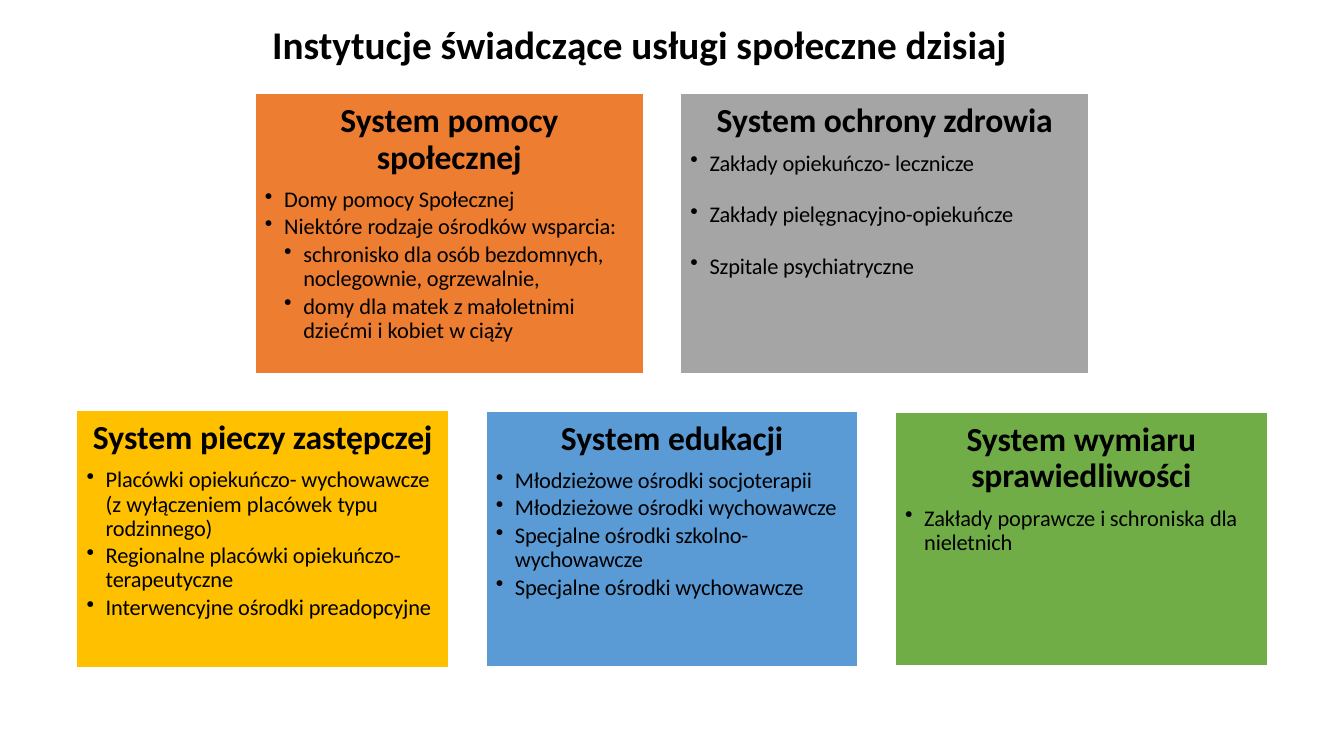
from dataclasses import dataclass
from typing import NamedTuple

from lxml.etree import SubElement
from pptx import Presentation
from pptx.dml.color import RGBColor
from pptx.enum.shapes import MSO_SHAPE
from pptx.enum.text import MSO_ANCHOR, PP_ALIGN
from pptx.oxml.ns import qn
from pptx.util import Inches, Pt


@dataclass(frozen=True)
class Theme:
    font: str = "Calibri"
    text: str = "000000"
    border: str = "FFFFFF"
    social_care: str = "ED7D31"
    health: str = "A5A5A5"
    foster_care: str = "FFC000"
    education: str = "5B9BD5"
    justice: str = "70AD47"
    title_size: float = 28
    heading_size: float = 24
    item_size: float = 16


class Words(NamedTuple):
    text: str
    spacing: float = 0  # points between letters


@dataclass(frozen=True)
class Item:
    words: list[Words]
    level: int = 1
    space_after: float = 2.4


@dataclass(frozen=True)
class System:
    heading: str
    color: str
    width: float  # percent of slide width
    height: float  # percent of slide height
    items: list[Item]


@dataclass(frozen=True)
class Row:
    center: float  # percent of slide height
    systems: list[System]


THEME = Theme()
SLIDE_WIDTH, SLIDE_HEIGHT = Inches(13.33), Inches(7.5)
GAP = 2.75  # percent of slide width
INSET = Inches(0.1)
INDENT = Inches(0.19)
LOOSE = 19.5  # space after the widely set health items

# Content
ROWS = [
    Row(30.93, [
        System("pomocy społecznej", THEME.social_care, 28.9, 37.07, [
            Item([Words("Domy "), Words("pomocy Społecznej", -0.1)]),
            Item([Words("Niektóre "), Words("rodzaje ", -0.1), Words("ośrodków "),
                  Words("wsparcia:", -0.1)]),
            Item([Words("schronisko dla "), Words("osób ", -0.2),
                  Words("bezdomnych, noclegownie, ogrzewalnie,", -0.1)], level=2),
            Item([Words("domy dla matek "), Words("z ", -0.5), Words("małoletnimi ", -0.1),
                  Words("dziećmi i kobiet "), Words("w ", -0.5), Words("ciąży", -0.1)], level=2),
        ]),
        System("ochrony zdrowia", THEME.health, 30.4, 37.07, [
            Item([Words("Zakłady opiekuńczo- lecznicze", -0.1)], space_after=LOOSE),
            Item([Words("Zakłady pielęgnacyjno-opiekuńcze", -0.1)], space_after=LOOSE),
            Item([Words("Szpitale psychiatryczne", -0.1)]),
        ]),
    ]),
    Row(71.3, [
        System("pieczy zastępczej", THEME.foster_care, 27.7, 34, [
            Item([Words("Placówki opiekuńczo- wychowawcze ", -0.1), Words("(z "),
                  Words("wyłączeniem ", -0.1), Words("placówek "), Words("typu ", -0.2),
                  Words("rodzinnego)", -0.1)]),
            Item([Words("Regionalne placówki opiekuńczo- terapeutyczne", -0.1)]),
            Item([Words("Interwencyjne ośrodki preadopcyjne", -0.1)]),
        ]),
        System("edukacji", THEME.education, 27.7, 33.87, [
            Item([Words("Młodzieżowe ośrodki socjoterapii", -0.1)]),
            Item([Words("Młodzieżowe ośrodki wychowawcze", -0.1)]),
            Item([Words("Specjalne ośrodki szkolno- wychowawcze", -0.1)]),
            Item([Words("Specjalne ośrodki wychowawcze", -0.1)]),
        ]),
        System("wymiaru sprawiedliwości", THEME.justice, 27.7, 33.47, [
            Item([Words("Zakłady ", -0.1), Words("poprawcze "), Words("i ", -0.5),
                  Words("schroniska "), Words("dla ", -0.2), Words("nieletnich", -0.1)]),
        ]),
    ]),
]


def across(percent: float) -> int:
    return round(SLIDE_WIDTH * percent / 100)


def down(percent: float) -> int:
    return round(SLIDE_HEIGHT * percent / 100)


def add_words(paragraph, words: Words, size: float, bold: bool = False) -> None:
    run = paragraph.add_run()
    run.text = words.text
    run.font.name = THEME.font
    run.font.size = Pt(size)
    run.font.bold = bold
    run.font.color.rgb = RGBColor.from_string(THEME.text)
    if words.spacing:
        run.font._element.set("spc", str(round(words.spacing * 100)))


def add_item(frame, item: Item) -> None:
    paragraph = frame.add_paragraph()
    properties = paragraph._p.get_or_add_pPr()
    properties.set("marL", str(INDENT * item.level))
    properties.set("indent", str(-INDENT))
    SubElement(properties, qn("a:buChar")).set("char", "•")
    paragraph.level = item.level
    paragraph.alignment = PP_ALIGN.LEFT
    paragraph.line_spacing = 0.9
    paragraph.space_before = Pt(0)
    paragraph.space_after = Pt(item.space_after)
    for words in item.words:
        add_words(paragraph, words, THEME.item_size)


def add_system(slide, system: System, left: float, center: float) -> None:
    card = slide.shapes.add_shape(
        MSO_SHAPE.RECTANGLE, across(left), down(center - system.height / 2),
        across(system.width), down(system.height))
    card.shadow.inherit = False
    card.fill.solid()
    card.fill.fore_color.rgb = RGBColor.from_string(system.color)
    card.line.color.rgb = RGBColor.from_string(THEME.border)
    card.line.width = Pt(1)

    frame = card.text_frame
    frame.word_wrap = True
    frame.vertical_anchor = MSO_ANCHOR.TOP
    frame.margin_left = frame.margin_right = INSET
    frame.margin_top = frame.margin_bottom = INSET

    heading = frame.paragraphs[0]
    heading.alignment = PP_ALIGN.CENTER
    heading.line_spacing = 0.9
    heading.space_after = Pt(8.4)
    for words in (Words("System "), Words(system.heading, -0.1)):
        add_words(heading, words, THEME.heading_size, bold=True)
    for item in system.items:
        add_item(frame, item)


def add_row(slide, row: Row) -> None:
    total = sum(system.width for system in row.systems) + GAP * (len(row.systems) - 1)
    left = (100 - total) / 2
    for system in row.systems:
        add_system(slide, system, left, row.center)
        left += system.width + GAP


def add_title(slide) -> None:
    box = slide.shapes.add_textbox(across(16.73), down(2.4), across(62.34), down(6.53))
    frame = box.text_frame
    frame.word_wrap = True
    frame.vertical_anchor = MSO_ANCHOR.MIDDLE
    frame.margin_left = frame.margin_right = frame.margin_bottom = 0
    frame.margin_top = Inches(0.02)
    title = frame.paragraphs[0]
    title.alignment = PP_ALIGN.CENTER
    add_words(title, Words("Instytucje świadczące usługi społeczne dzisiaj "),
              THEME.title_size, bold=True)


def main() -> None:
    presentation = Presentation()
    presentation.slide_width, presentation.slide_height = SLIDE_WIDTH, SLIDE_HEIGHT
    slide = presentation.slides.add_slide(presentation.slide_layouts[6])
    for row in ROWS:
        add_row(slide, row)
    add_title(slide)
    presentation.save("out.pptx")


if __name__ == "__main__":
    main()
